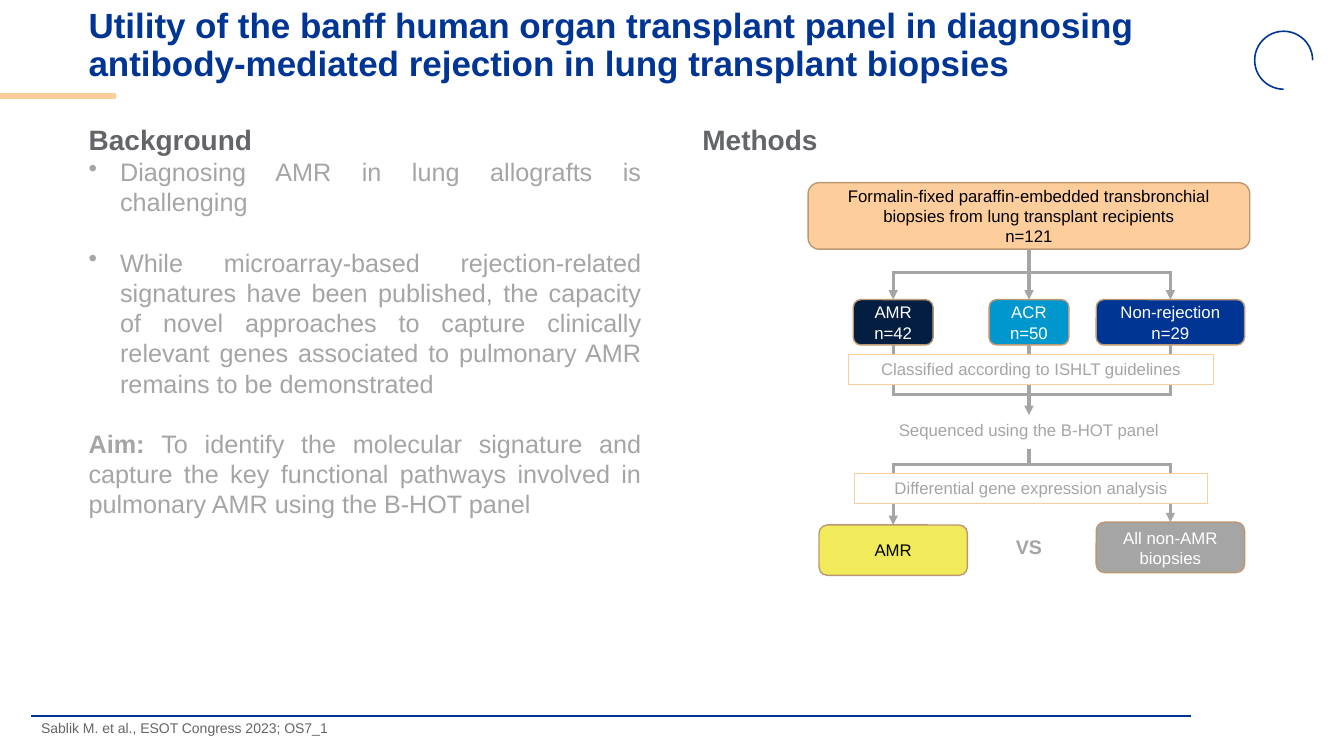
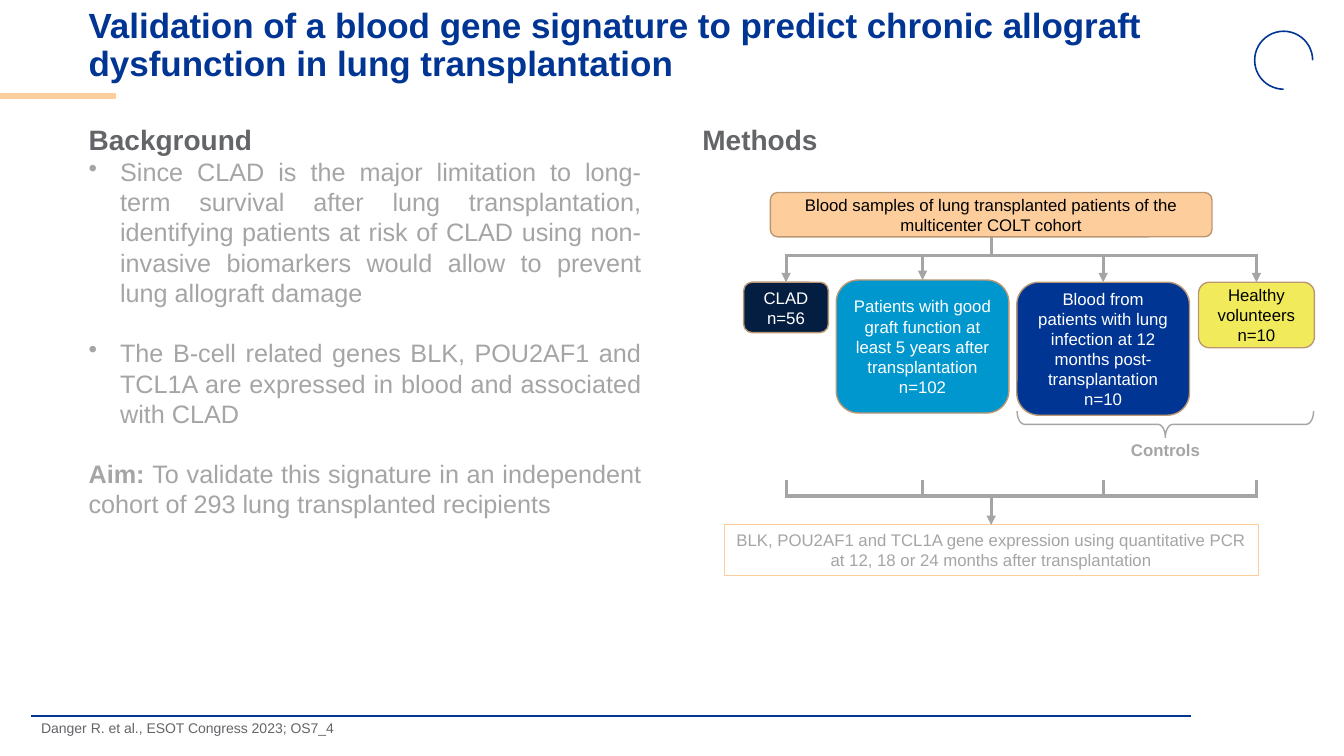
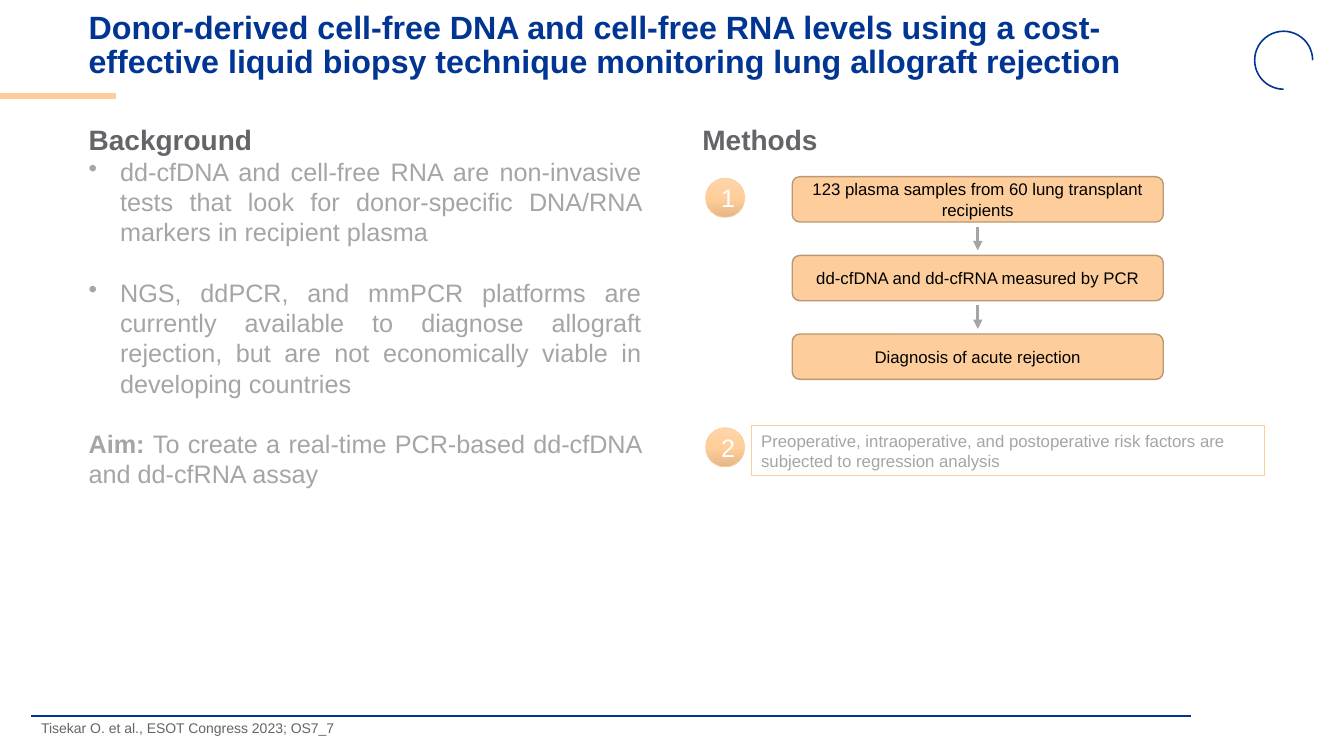
from copy import deepcopy

from pptx import Presentation
from pptx.dml.color import RGBColor
from pptx.enum.shapes import MSO_CONNECTOR, MSO_SHAPE
from pptx.enum.text import MSO_ANCHOR as ANCHOR, PP_ALIGN as ALIGN
from pptx.oxml.ns import qn
from pptx.oxml.xmlchemy import OxmlElement
from pptx.util import Pt

# Shared look
FONT = "Arial"
BLUE = RGBColor(0x00, 0x35, 0x94)
NAVY = RGBColor(0x04, 0x1E, 0x42)
CYAN = RGBColor(0x00, 0x97, 0xCE)
PEACH = RGBColor(0xFD, 0xCE, 0x9C)
YELLOW = RGBColor(0xF1, 0xEB, 0x5B)
BRONZE = RGBColor(0xBB, 0x98, 0x73)
GREY = RGBColor(0xA5, 0xA5, 0xA5)
DARK_GREY = RGBColor(0x63, 0x65, 0x69)
WHITE = RGBColor(0xFF, 0xFF, 0xFF)
BLACK = RGBColor(0x00, 0x00, 0x00)
BADGE_STOPS = (
    (0, RGBColor(0xFF, 0xD5, 0xAA)),
    (0.5, RGBColor(0xFF, 0xCE, 0x9A)),
    (1, RGBColor(0xE5, 0xB7, 0x87)),
)
HEADING_TOP = 84
BODY_SIZE = 18
BODY_INDENT = 22.5
BODY_GAP = 21.6
LABEL_HEIGHT = 21.6


# Text
def style(paragraph, size, color, bold=False, align=ALIGN.LEFT):
    paragraph.alignment = align
    font = paragraph.font
    font.name, font.size, font.bold = FONT, Pt(size), bold
    font.color.rgb = color


def write(shape, text, size, color, bold=False, align=ALIGN.CENTER, anchor=ANCHOR.TOP):
    frame = shape.text_frame
    frame.word_wrap = True
    frame.vertical_anchor = anchor
    frame.text = text
    for paragraph in frame.paragraphs:
        style(paragraph, size, color, bold, align)


def add_text(slide, left, top, width, height, text, size, color, **options):
    box = slide.shapes.add_textbox(Pt(left), Pt(top), Pt(width), Pt(height))
    write(box, text, size, color, **options)
    return box


def add_centred_text(slide, center, top, width, height, text, size=12, bold=False):
    return add_text(slide, center - width / 2, top, width, height, text, size, GREY, bold=bold)


def add_bullet(paragraph):
    properties = paragraph._p.get_or_add_pPr()
    properties.set("marL", str(Pt(BODY_INDENT)))
    properties.set("indent", str(-Pt(BODY_INDENT)))
    bullet = OxmlElement("a:buChar")
    bullet.set("char", "•")
    properties.append(bullet)


# Shapes
def add_shape(slide, kind, left, top, width, height, fill, outline, weight):
    shape = slide.shapes.add_shape(kind, Pt(left), Pt(top), Pt(width), Pt(height))
    shape.shadow.inherit = False
    if fill is None:
        shape.fill.background()
    else:
        shape.fill.solid()
        shape.fill.fore_color.rgb = fill
    shape.line.color.rgb = outline
    shape.line.width = Pt(weight)
    return shape


def add_node(slide, center, top, width, height, text, fill, color=WHITE):
    node = add_shape(slide, MSO_SHAPE.ROUNDED_RECTANGLE, center - width / 2, top,
                     width, height, fill, BRONZE, 1)
    write(node, text, 12, color, anchor=ANCHOR.MIDDLE)
    return node


def add_label(slide, center, top, width, height, text, fill=WHITE, align=ALIGN.CENTER):
    label = add_shape(slide, MSO_SHAPE.RECTANGLE, center - width / 2, top,
                      width, height, fill, PEACH, 0.75)
    write(label, text, 12, GREY, align=align)
    return label


def add_badge(slide, top, number):
    badge = add_shape(slide, MSO_SHAPE.OVAL, 504, top, 28, 28, PEACH, PEACH, 0.5)
    badge.fill.gradient()
    badge.fill.gradient_angle = 270
    stop_list = badge._element.spPr.find(qn("a:gradFill")).find(qn("a:gsLst"))
    stop_list.append(deepcopy(stop_list[0]))
    for stop, (position, color) in zip(badge.fill.gradient_stops, BADGE_STOPS):
        stop.position = position
        stop.color.rgb = color
    write(badge, number, 18, WHITE, anchor=ANCHOR.MIDDLE)


# Lines: start joins the bottom of a shape, end joins the top of one
def add_line(slide, x1, y1, x2, y2, color=GREY, weight=2.25, arrow=False,
             square=False, start=None, end=None):
    line = slide.shapes.add_connector(MSO_CONNECTOR.STRAIGHT, Pt(x1), Pt(y1), Pt(x2), Pt(y2))
    line.line.color.rgb = color
    line.line.width = Pt(weight)
    if start is not None:
        line.begin_connect(start, 2)
    if end is not None:
        line.end_connect(end, 0)
    properties = line._element.spPr
    outline = properties.find(qn("a:ln"))
    if square:
        outline.set("cap", "sq")
    if arrow:
        head = OxmlElement("a:tailEnd")
        head.set("type", "triangle")
        outline.append(head)
    properties.append(OxmlElement("a:effectLst"))


def add_bar(slide, centers, y):
    add_line(slide, centers[0], y, centers[-1], y, square=True)


def add_drops(slide, centers, y, nodes):
    for center, node in zip(centers, nodes):
        add_line(slide, center, y, center, y, arrow=True, end=node)


# Parts that every slide has
def add_frame(presentation, title, citation, bullets, aim, title_size=25):
    slide = presentation.slides.add_slide(presentation.slide_layouts[6])
    add_line(slide, 0, 68.4, 83, 68.4, PEACH, 4.5)
    add_line(slide, 22.3, 511.2, 851, 511.2, BLUE, 1.5)
    ring = add_shape(slide, MSO_SHAPE.ARC, 896.2, 22.3, 41.4, 41.4, None, BLUE, 1.13)
    ring.adjustments[0] = 54
    ring.adjustments[1] = 0

    heading = add_text(slide, 56.2, 5, 828, 56, title, title_size, BLUE, bold=True,
                       align=ALIGN.LEFT, anchor=ANCHOR.MIDDLE)
    footer = add_text(slide, 22.3, 512, 564.5, 24.5, citation, 10, DARK_GREY, align=ALIGN.LEFT)
    for box in (heading, footer):
        box.text_frame.paragraphs[0].line_spacing = 0.9

    background = add_text(slide, 56.2, HEADING_TOP, 409, 293, "Background", 20, DARK_GREY,
                          bold=True, align=ALIGN.JUSTIFY)
    for text in bullets:
        paragraph = background.text_frame.add_paragraph()
        paragraph.text = text
        paragraph.space_after = Pt(BODY_GAP)
        add_bullet(paragraph)
        style(paragraph, BODY_SIZE, GREY, align=ALIGN.JUSTIFY)
    paragraph = background.text_frame.add_paragraph()
    style(paragraph, BODY_SIZE, GREY, align=ALIGN.JUSTIFY)
    lead = paragraph.add_run()
    lead.text = "Aim: "
    lead.font.bold = True
    paragraph.add_run().text = aim

    add_text(slide, 494.6, HEADING_TOP, 118, 31.7, "Methods", 20, DARK_GREY,
             bold=True, align=ALIGN.JUSTIFY)
    return slide


def build_tissue_panel(presentation):
    slide = add_frame(
        presentation,
        "Utility of the banff human organ transplant panel in diagnosing "
        "antibody-mediated rejection in lung transplant biopsies",
        "Sablik M. et al., ESOT Congress 2023; OS7_1",
        ("Diagnosing AMR in lung allografts is challenging",
         "While microarray-based rejection-related signatures have been published, the "
         "capacity of novel approaches to capture clinically relevant genes associated "
         "to pulmonary AMR remains to be demonstrated"),
        "To identify the molecular signature and capture the key functional pathways "
        "involved in pulmonary AMR using the B-HOT panel")
    left, middle, right = centers = (638, 735, 836)

    # Biopsies split into three groups
    biopsies = add_node(
        slide, middle, 130.5, 315.5, 47.5,
        "Formalin-fixed paraffin-embedded transbronchial biopsies from lung transplant "
        "recipients\nn=121", PEACH, BLACK)
    groups = [
        add_node(slide, center, 214, width, 32.4, text, fill)
        for center, width, text, fill in (
            (left, 57, "AMR\nn=42", NAVY),
            (middle, 57, "ACR\nn=50", CYAN),
            (right, 106, "Non-rejection\nn=29", BLUE))
    ]
    add_bar(slide, centers, 194.5)
    add_line(slide, middle, 178, middle, 214, arrow=True, start=biopsies, end=groups[1])
    add_drops(slide, (left, right), 194.5, (groups[0], groups[2]))

    # Groups merge into sequencing
    sequencing = add_centred_text(slide, middle, 296.5, 232.5, 24,
                                  "Sequenced using the B-HOT panel")
    for center, group in ((left, groups[0]), (right, groups[2])):
        add_line(slide, center, 246, center, 281.5, start=group)
    add_bar(slide, centers, 281.5)
    add_line(slide, middle, 246, middle, 296, arrow=True, start=groups[1], end=sequencing)

    # Comparison
    compared = (
        add_node(slide, left, 375, 106, 36, "AMR", YELLOW, BLACK),
        add_node(slide, right, 373, 106, 36, "All non-AMR biopsies", GREY),
    )
    add_line(slide, middle, 320, middle, 331.5, start=sequencing)
    add_bar(slide, centers, 331.5)
    add_drops(slide, (left, right), 331.5, compared)
    add_centred_text(slide, middle, 378.7, 62.6, 24.5, "VS", 14, bold=True)

    # Labels across the lines
    add_label(slide, 736.5, 252.9, 260.6, LABEL_HEIGHT, "Classified according to ISHLT guidelines")
    add_label(slide, 736.5, 338, 252.7, LABEL_HEIGHT, "Differential gene expression analysis")


def build_blood_signature(presentation):
    slide = add_frame(
        presentation,
        "Validation of a blood gene signature to predict chronic allograft dysfunction "
        "in lung transplantation",
        "Danger R. et al., ESOT Congress 2023; OS7_4",
        ("Since CLAD is the major limitation to long-term survival after lung "
         "transplantation, identifying patients at risk of CLAD using non-invasive "
         "biomarkers would allow to prevent lung allograft damage",
         "The B-cell related genes BLK, POU2AF1 and TCL1A are expressed in blood and "
         "associated with CLAD"),
        "To validate this signature in an independent cohort of 293 lung transplanted "
        "recipients")
    middle = 708
    centers = (561.5, 659, 788, 897.5)

    # Cohort split into four groups
    cohort = add_node(
        slide, middle, 137.5, 315.5, 31.7,
        "Blood samples of lung transplanted patients of the multicenter COLT cohort",
        PEACH, BLACK)
    groups = [
        add_node(slide, center, top, width, height, text, fill, color)
        for center, (top, width, height, text, fill, color) in zip(centers, (
            (201.6, 60.5, 36, "CLAD n=56", NAVY, WHITE),
            (200, 123.3, 95, "Patients with good graft function at least 5 years after "
             "transplantation n=102", CYAN, WHITE),
            (201.6, 123.3, 95, "Blood from patients with lung infection at 12 months "
             "post-transplantation\nn=10", BLUE, WHITE),
            (201.6, 82.8, 46.8, "Healthy volunteers\nn=10", YELLOW, BLACK)))
    ]
    add_line(slide, middle, 169, middle, 182.5, start=cohort)
    add_bar(slide, centers, 182.5)
    add_drops(slide, centers, 182.5, groups)

    # Controls
    brace = add_shape(slide, MSO_SHAPE.RIGHT_BRACE, 823, 197.2, 18.8, 211.8, None, GREY, 1)
    brace.rotation = 90
    brace.adjustments[0] = 0.28
    add_centred_text(slide, 832.5, 310.3, 75.6, LABEL_HEIGHT, "Controls", bold=True)

    # Groups merge into the assay
    assay = add_label(
        slide, middle, 375, 381.6, 36,
        "BLK, POU2AF1 and TCL1A gene expression using quantitative PCR at 12, 18 or "
        "24 months after transplantation", fill=None)
    for center in centers:
        add_line(slide, center, 343, center, 354.3)
    add_bar(slide, centers, 354.3)
    add_drops(slide, (middle,), 354.3, (assay,))


def build_liquid_biopsy(presentation):
    slide = add_frame(
        presentation,
        "Donor-derived cell-free DNA and cell-free RNA levels using a cost-effective "
        "liquid biopsy technique monitoring lung allograft rejection",
        "Tisekar O. et al., ESOT Congress 2023; OS7_7",
        ("dd-cfDNA and cell-free RNA are non-invasive tests that look for donor-specific "
         "DNA/RNA markers in recipient plasma",
         "NGS, ddPCR, and mmPCR platforms are currently available to diagnose allograft "
         "rejection, but are not economically viable in developing countries"),
        "To create a real-time PCR-based dd-cfDNA and dd-cfRNA assay",
        title_size=23)
    center, first_top, pitch = 698.4, 126.2, 56.2

    # Step 1: assay chain
    steps = ("123 plasma samples from 60 lung transplant recipients",
             "dd-cfDNA and dd-cfRNA measured by PCR",
             "Diagnosis of acute rejection")
    for index, text in enumerate(steps):
        top = first_top + index * pitch
        add_node(slide, center, top, 265, 32.4, text, PEACH, BLACK)
        if index:
            add_line(slide, center, top - 20.4, center, top - 3.6, arrow=True)
    add_badge(slide, 127.3, "1")

    # Step 2: risk factors
    add_label(slide, 720, 304, 366.8, 36,
              "Preoperative, intraoperative, and postoperative risk factors are subjected "
              "to regression analysis", fill=None, align=ALIGN.LEFT)
    add_badge(slide, 305.5, "2")


def main():
    presentation = Presentation()
    presentation.slide_width = Pt(960)
    presentation.slide_height = Pt(540)
    build_tissue_panel(presentation)
    build_blood_signature(presentation)
    build_liquid_biopsy(presentation)
    presentation.save("out.pptx")


if __name__ == "__main__":
    main()
